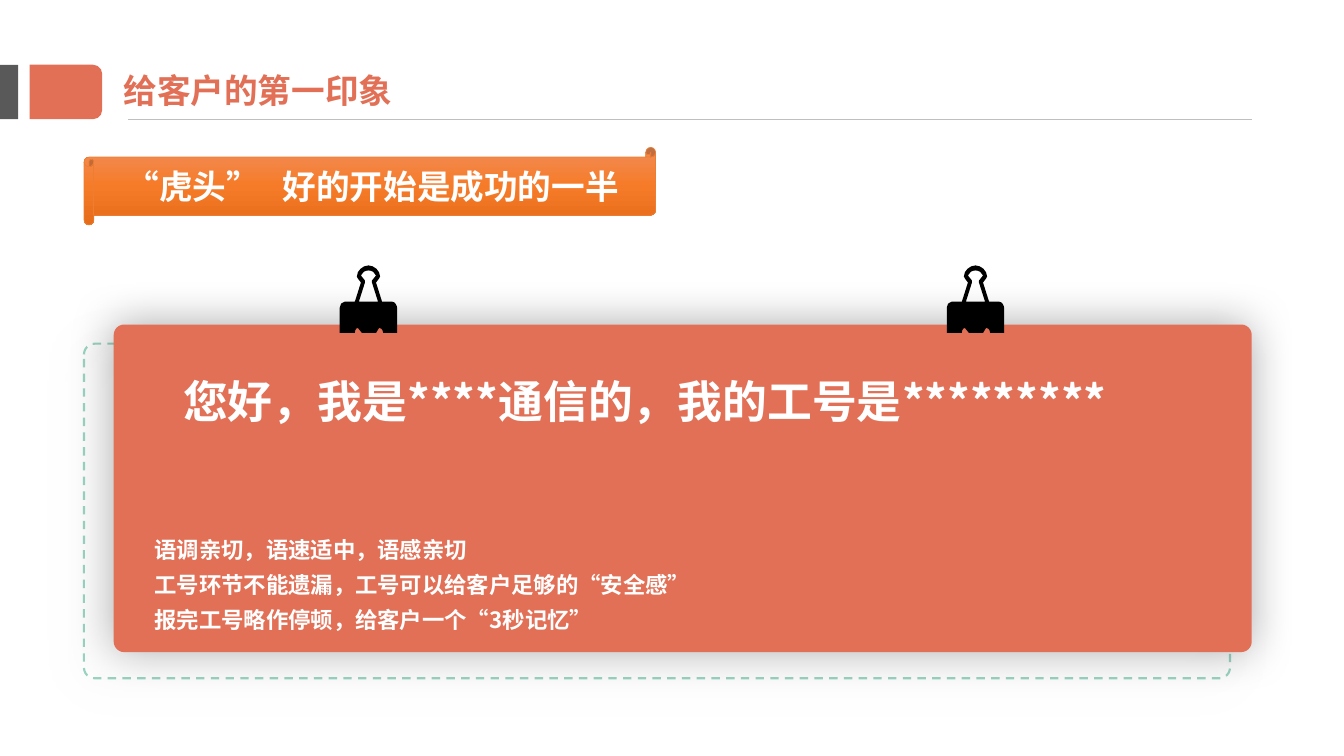
"""Build the slide on the first impression given to a customer."""
from copy import deepcopy
from dataclasses import dataclass

from lxml import etree
from pptx import Presentation
from pptx.dml.color import RGBColor
from pptx.enum.dml import MSO_LINE
from pptx.enum.shapes import MSO_CONNECTOR, MSO_SHAPE
from pptx.enum.text import MSO_ANCHOR, MSO_AUTO_SIZE, PP_ALIGN
from pptx.oxml.ns import qn
from pptx.util import Pt

RECT, ROUND_RECT = MSO_SHAPE.RECTANGLE, MSO_SHAPE.ROUNDED_RECTANGLE
ROUND_TOP, SCROLL = MSO_SHAPE.ROUND_2_SAME_RECTANGLE, MSO_SHAPE.HORIZONTAL_SCROLL
STRAIGHT, DASH = MSO_CONNECTOR.STRAIGHT, MSO_LINE.DASH
CENTER, MIDDLE = PP_ALIGN.CENTER, MSO_ANCHOR.MIDDLE
GROW = MSO_AUTO_SIZE.SHAPE_TO_FIT_TEXT


@dataclass(frozen=True)
class Theme:
    """Colours, font and type sizes of the slide."""
    coral: str = "E27056"
    white: str = "FFFFFF"
    black: str = "000000"
    gray: str = "595959"
    rule: str = "BFBFBF"
    mint: str = "9AD3C2"
    scroll_line: str = "ED7D31"
    scroll_fill: tuple = ("F18C57", "F67B28", "E56C19")
    font: str = "Noto Sans CJK SC"
    greeting: int = 32
    heading: int = 24
    tips: int = 16


THEME = Theme()
UNIT = 0.72
CLIP_OUTLINE = [
    (5, 36), (2, 36, 0, 39, 0, 42), (0, 67), (15, 67), (15, 67, 15, 62, 18, 62),
    (22, 67), (36, 67), (39, 62), (43, 62, 43, 67, 43, 67), (57, 67), (57, 43),
    (57, 40, 55, 36, 52, 36), (42, 36), (36, 17), (39, 13), (40, 12, 40, 12, 40, 11),
    (40, 5, 34, 0, 28.5, 0), (23, 0, 17, 5, 17, 11), (17, 12, 17, 12, 18, 13),
    (21, 17), (15, 36), (5, 36),
]
CLIP_HOLE = [
    (25, 17), (26, 16, 25, 15, 25, 15), (21, 10), (22, 7, 25, 5, 28.5, 5),
    (32, 5, 35, 7, 36, 10), (32, 15), (32, 15, 31, 16, 32, 17), (38, 36), (19, 36),
    (25, 17),
]
TIPS = [
    "语调亲切，语速适中，语感亲切",
    "工号环节不能遗漏，工号可以给客户足够的“安全感”",
    "报完工号略作停顿，给客户一个“3秒记忆”",
]


def rgb(color):
    """Turn a hex colour into an RGBColor."""
    return RGBColor.from_string(color)


def style_text(frame, size, color):
    """Format every run of a text frame."""
    for paragraph in frame.paragraphs:
        for run in paragraph.runs:
            run.font.size, run.font.bold, run.font.name = Pt(size), True, THEME.font
            run.font.color.rgb = rgb(color)
            etree.SubElement(run.font._element, qn("a:ea"), typeface=THEME.font)


def add_block(slide, preset, box, fill=None):
    """Add a preset shape without line or shadow."""
    block = slide.shapes.add_shape(preset, *map(Pt, box))
    block.shadow.inherit = False
    block.line.fill.background()
    if fill:
        block.fill.solid()
        block.fill.fore_color.rgb = rgb(fill)
    else:
        block.fill.background()
    return block


def add_backdrop(slide):
    """Cover the slide with slightly transparent white."""
    backdrop = add_block(slide, RECT, (0, 0, 960, 540), THEME.white)
    tint = backdrop._element.spPr.find(qn("a:solidFill"))[0]
    etree.SubElement(tint, qn("a:alpha"), val="94000")


def add_card(slide, box, fill=None):
    """Add a rounded card with a soft shadow."""
    card = add_block(slide, ROUND_RECT, box, fill)
    card.adjustments[0] = 0.032
    effects = card._element.spPr.find(qn("a:effectLst"))
    shadow = etree.SubElement(effects, qn("a:outerShdw"), blurRad=str(Pt(32)),
                              dist="0", algn="ctr", rotWithShape="0")
    tint = etree.SubElement(shadow, qn("a:srgbClr"), val=THEME.black)
    etree.SubElement(tint, qn("a:alpha"), val="32000")
    return card


def add_rule(slide, left, right, top):
    """Add the thin line under the title."""
    rule = slide.shapes.add_connector(STRAIGHT, Pt(left), Pt(top), Pt(right), Pt(top))
    rule.line.color.rgb = rgb(THEME.rule)
    rule.line.width = Pt(0.5)
    etree.SubElement(rule._element.spPr, qn("a:effectLst"))


def add_text(slide, box, lines, size, color, spacing=None, wrap=True, inset=7.2):
    """Add a text box with one paragraph per line."""
    frame = slide.shapes.add_textbox(*map(Pt, box)).text_frame
    frame.word_wrap, frame.auto_size = wrap, GROW
    frame.margin_left = Pt(inset)
    frame.text = "\n".join(lines)
    for paragraph in frame.paragraphs:
        paragraph.line_spacing = spacing
    style_text(frame, size, color)


def bend_lines(outline, segments):
    """Turn the straight steps of an outline into curves where asked."""
    for step, segment in zip(list(outline.iter(qn("a:lnTo"))), segments):
        if len(segment) == 6:
            curve = etree.Element(qn("a:cubicBezTo"))
            for x, y in zip(segment[::2], segment[1::2]):
                etree.SubElement(curve, qn("a:pt"),
                                 x=str(Pt(x * UNIT)), y=str(Pt(y * UNIT)))
            step.getparent().replace(step, curve)


def add_clip(slide, left, top):
    """Add a binder clip with an open handle."""
    outline, hole = (
        [(Pt(left + segment[-2] * UNIT), Pt(top + segment[-1] * UNIT))
         for segment in segments]
        for segments in (CLIP_OUTLINE, CLIP_HOLE))
    builder = slide.shapes.build_freeform(*outline[0])
    builder.add_line_segments(outline[1:], close=True)
    builder.move_to(*hole[0])
    builder.add_line_segments(hole[1:], close=True)
    clip = builder.convert_to_shape()
    bend_lines(clip._element.spPr, CLIP_OUTLINE[1:] + CLIP_HOLE[1:])
    clip.shadow.inherit = False
    clip.fill.solid()
    clip.fill.fore_color.rgb = rgb(THEME.black)
    clip.line.fill.background()


def add_scroll(slide, box, label, message):
    """Add the scroll banner with a label and a message."""
    scroll = add_block(slide, SCROLL, box)
    scroll.fill.gradient()
    scroll.fill.gradient_angle = 270
    stop_list = scroll._element.spPr.find(qn("a:gradFill")).find(qn("a:gsLst"))
    stop_list.append(deepcopy(stop_list[0]))
    for index, stop in enumerate(scroll.fill.gradient_stops):
        stop.color.rgb = rgb(THEME.scroll_fill[index])
        stop.position = index / 2
    scroll.line.color.rgb = rgb(THEME.scroll_line)
    scroll.line.width = Pt(0.5)
    frame = scroll.text_frame
    frame.vertical_anchor = MIDDLE
    paragraph = frame.paragraphs[0]
    paragraph.alignment = CENTER
    label_run, gap, message_run = (paragraph.add_run() for _ in range(3))
    label_run.text, gap.text, message_run.text = label, " ", message
    style_text(frame, THEME.heading, THEME.white)
    gap.font._element.set("spc", "1080")


def main():
    """Build and save the slide."""
    deck = Presentation()
    deck.slide_width, deck.slide_height = Pt(960), Pt(540)
    slide = deck.slides.add_slide(deck.slide_layouts[6])

    add_backdrop(slide)
    dashed_card = add_card(slide, (60, 245.5, 818.6, 239))
    dashed_card.line.color.rgb = rgb(THEME.mint)
    dashed_card.line.width = Pt(1.5)
    dashed_card.line.dash_style = DASH
    add_card(slide, (81.2, 231.8, 812.9, 234), THEME.coral)
    add_rule(slide, 91.4, 894.2, 85)

    add_text(slide, (72.7, 252, 790.6, 52.6), ["您好，我是****通信的，我的工号是*********"],
             THEME.greeting, THEME.white, spacing=1.3, inset=58.1)
    add_text(slide, (103.3, 373.7, 790.6, 82.8), TIPS,
             THEME.tips, THEME.white, spacing=1.3)
    for clip_left in (242.7, 676.3):
        add_clip(slide, clip_left, 189.6)

    add_block(slide, RECT, (0, 46.3, 13, 38.9), THEME.gray)
    tab = add_block(slide, ROUND_TOP, (27.6, 39.8, 38.9, 51.8), THEME.coral)
    tab.rotation = 90
    add_text(slide, (81.2, 46.1, 208, 36), ["给客户的第一印象"],
             THEME.heading, THEME.coral, wrap=False)
    add_scroll(slide, (60.1, 105.3, 408.2, 55.4), "“虎头”", "好的开始是成功的一半")
    deck.save("out.pptx")


if __name__ == "__main__":
    main()
